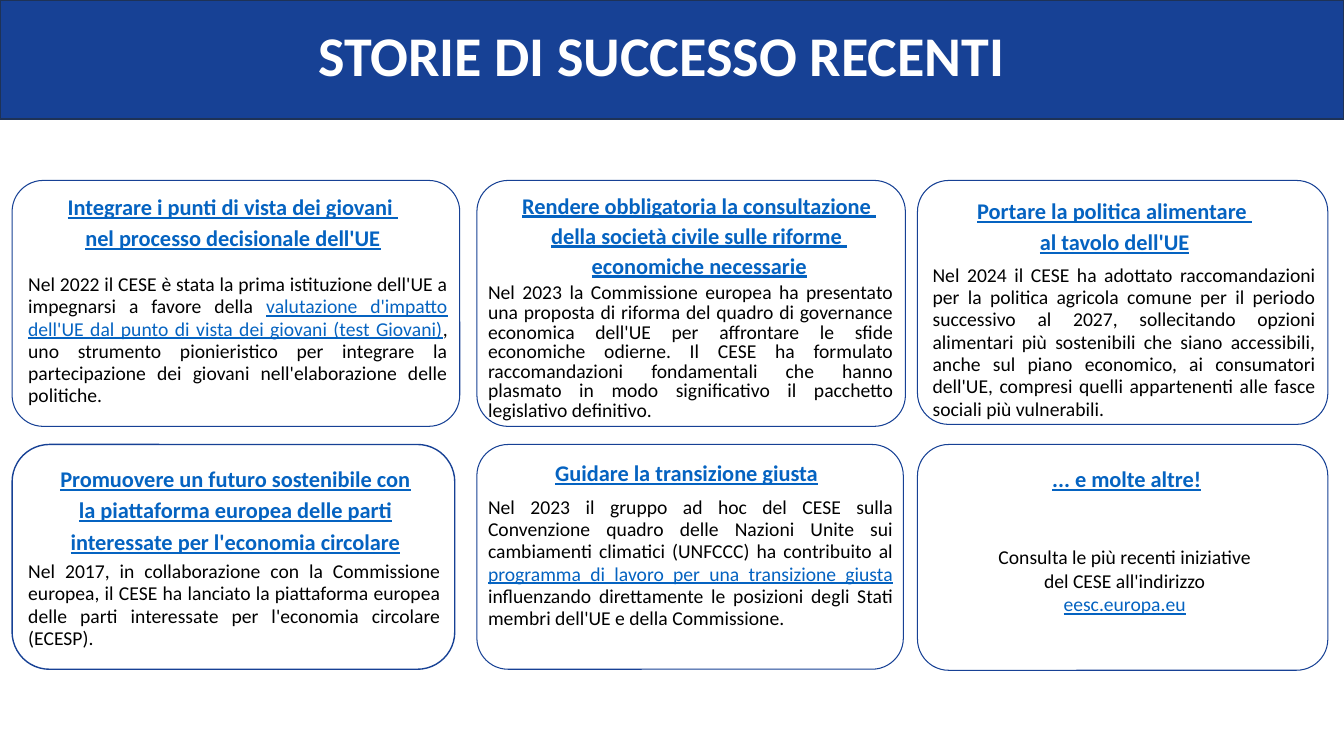
from dataclasses import dataclass

from pptx import Presentation
from pptx.dml.color import RGBColor
from pptx.enum.shapes import MSO_SHAPE
from pptx.enum.text import MSO_ANCHOR, MSO_AUTO_SIZE, PP_ALIGN
from pptx.util import Inches, Pt

RECT, ROUND = MSO_SHAPE.RECTANGLE, MSO_SHAPE.ROUNDED_RECTANGLE
CENTER, JUSTIFY = PP_ALIGN.CENTER, PP_ALIGN.JUSTIFY
TOP, NO_FIT = MSO_ANCHOR.TOP, MSO_AUTO_SIZE.NONE


@dataclass(frozen=True)
class Theme:
    font: str = "Calibri"
    blue: RGBColor = RGBColor(0x17, 0x41, 0x95)
    edge: RGBColor = RGBColor(0x1E, 0x32, 0x56)
    link: RGBColor = RGBColor(0x05, 0x63, 0xC1)
    black: RGBColor = RGBColor(0, 0, 0)
    white: RGBColor = RGBColor(0xFF, 0xFF, 0xFF)
    title: int = 40
    head: int = 16
    body: int = 14


THEME = Theme()
COLS = (0.12, 4.73, 9.1)
ROWS = (1.79, 4.41)

# Cards in reading order. "head" and "body" boxes are relative to the card.
# In "text", every second part is a link.
CARDS = [
    dict(size=(4.44, 2.44), head=(0.05, 0.08, 4.28, 0.74), body=(0.16, 0.92, 4.16, 1.31),
         title=["Integrare i punti di vista dei giovani ", "nel processo decisionale dell'UE"],
         text=["Nel 2022 il CESE è stata la prima istituzione dell'UE a impegnarsi a favore della ",
               "valutazione d'impatto dell'UE dal punto di vista dei giovani (test Giovani)",
               ", uno strumento pionieristico per integrare la partecipazione dei giovani "
               "nell'elaborazione delle politiche."]),
    dict(size=(4.25, 2.44), head=(0.15, 0.08, 4.11, 0.9), body=(0.11, 1.03, 4.02, 1.38),
         pitch=21.5, lead=14,
         title=["Rendere obbligatoria la consultazione ", "della società civile sulle riforme ",
                "economiche necessarie"],
         text=["Nel 2023 la Commissione europea ha presentato una proposta di riforma del quadro "
               "di governance economica dell'UE per affrontare le sfide economiche odierne. "
               "Il CESE ha formulato raccomandazioni fondamentali che hanno plasmato in modo "
               "significativo il pacchetto legislativo definitivo."]),
    dict(size=(4.07, 2.42), head=(0.01, 0.12, 3.89, 0.62), body=(0.15, 0.83, 3.8, 1.62),
         title=["Portare la politica alimentare ", "al tavolo dell'UE"],
         text=["Nel 2024 il CESE ha adottato raccomandazioni per la politica agricola comune per "
               "il periodo successivo al 2027, sollecitando opzioni alimentari più sostenibili "
               "che siano accessibili, anche sul piano economico, ai consumatori dell'UE, "
               "compresi quelli appartenenti alle fasce sociali più vulnerabili."]),
    dict(size=(4.39, 2.23), head=(0.39, 0.16, 3.65, 0.81), body=(0.16, 1.15, 4.09, 0.9),
         curve=0.37, line=1,
         title=["Promuovere un futuro sostenibile con la piattaforma europea delle parti "
                "interessate per l'economia circolare"],
         text=["Nel 2017, in collaborazione con la Commissione europea, il CESE ha lanciato la "
               "piattaforma europea delle parti interessate per l'economia circolare (ECESP)."]),
    dict(size=(4.23, 2.23), head=(0.11, 0.1, 3.94, 0.33), body=(0.11, 0.51, 4.02, 1.35),
         title=["Guidare la transizione giusta"],
         text=["Nel 2023 il gruppo ad hoc del CESE sulla Convenzione quadro delle Nazioni Unite "
               "sui cambiamenti climatici (UNFCCC) ha contribuito al ",
               "programma di lavoro per una transizione giusta",
               " influenzando direttamente le posizioni degli Stati membri dell'UE e della "
               "Commissione."]),
    dict(size=(4.07, 2.24), head=(0.95, 0.16, 2.25, 0.34), body=(0.74, 1, 2.63, 0.53),
         lead=16.8, align=CENTER,
         title=["... e molte altre!"],
         text=["Consulta le più recenti iniziative del CESE all'indirizzo ", "eesc.europa.eu"]),
]


def style(run, size, color, bold=False, under=False):
    font = run.font
    font.name, font.size, font.bold, font.underline = THEME.font, Pt(size), bold, under
    font.color.rgb = color


def paint(shape, fill, line, width):
    shape.shadow.inherit = False
    if fill is None:
        shape.fill.background()
    else:
        shape.fill.solid()
        shape.fill.fore_color.rgb = fill
    shape.line.color.rgb = line
    shape.line.width = Pt(width)


def frame(shape):
    """Give a text shape no margins, wrapping and top alignment."""
    text = shape.text_frame
    text.margin_left = text.margin_top = text.margin_right = text.margin_bottom = 0
    text.word_wrap, text.auto_size, text.vertical_anchor = True, NO_FIT, TOP
    return text


def text_box(slide, x, y, part):
    left, top, width, height = part
    return frame(slide.shapes.add_textbox(
        Inches(x + left), Inches(y + top), Inches(width), Inches(height)))


def banner(slide, x, y, w, h):
    # Title
    title = slide.shapes.title
    title.left, title.top = Inches(x + 2.82), Inches(y + 0.41)
    title.width, title.height = Inches(7.48), Inches(0.5)
    text = frame(title)
    text.text = "STORIE DI SUCCESSO RECENTI"
    line = text.paragraphs[0]
    line.alignment, line.line_spacing = CENTER, Pt(33)
    style(line.runs[0], THEME.title, THEME.white, bold=True)

    # Band behind the title
    band = slide.shapes.add_shape(RECT, Inches(x), Inches(y), Inches(w), Inches(h))
    paint(band, THEME.blue, THEME.edge, 1)
    title.element.addprevious(band.element)


def card(slide, x, y, data):
    # Rounded outline
    w, h = data["size"]
    box = slide.shapes.add_shape(ROUND, Inches(x), Inches(y), Inches(w), Inches(h))
    box.adjustments[0] = data.get("curve", 0.31) / min(w, h)
    paint(box, None, THEME.blue, data.get("line", 0.75))

    # Heading
    head = text_box(slide, x, y, data["head"])
    head.text = "\n".join(data["title"])
    for line in head.paragraphs:
        line.alignment, line.line_spacing = CENTER, Pt(data.get("pitch", 22.4))
        style(line.runs[0], THEME.head, THEME.link, bold=True, under=True)

    # Story
    story = text_box(slide, x, y, data["body"]).paragraphs[0]
    story.alignment = data.get("align", JUSTIFY)
    story.line_spacing = Pt(data.get("lead", 15.9))
    for i, words in enumerate(data["text"]):
        run = story.add_run()
        run.text = words
        linked = i % 2 == 1
        style(run, THEME.body, THEME.link if linked else THEME.black, under=linked)


def main():
    deck = Presentation()
    deck.slide_width, deck.slide_height = Inches(13.33), Inches(7.5)
    slide = deck.slides.add_slide(deck.slide_layouts[5])
    banner(slide, 0, 0, 13.33, 1.18)
    for i, data in enumerate(CARDS):
        row, col = divmod(i, len(COLS))
        card(slide, COLS[col], ROWS[row], data)
    deck.save("out.pptx")


if __name__ == "__main__":
    main()
